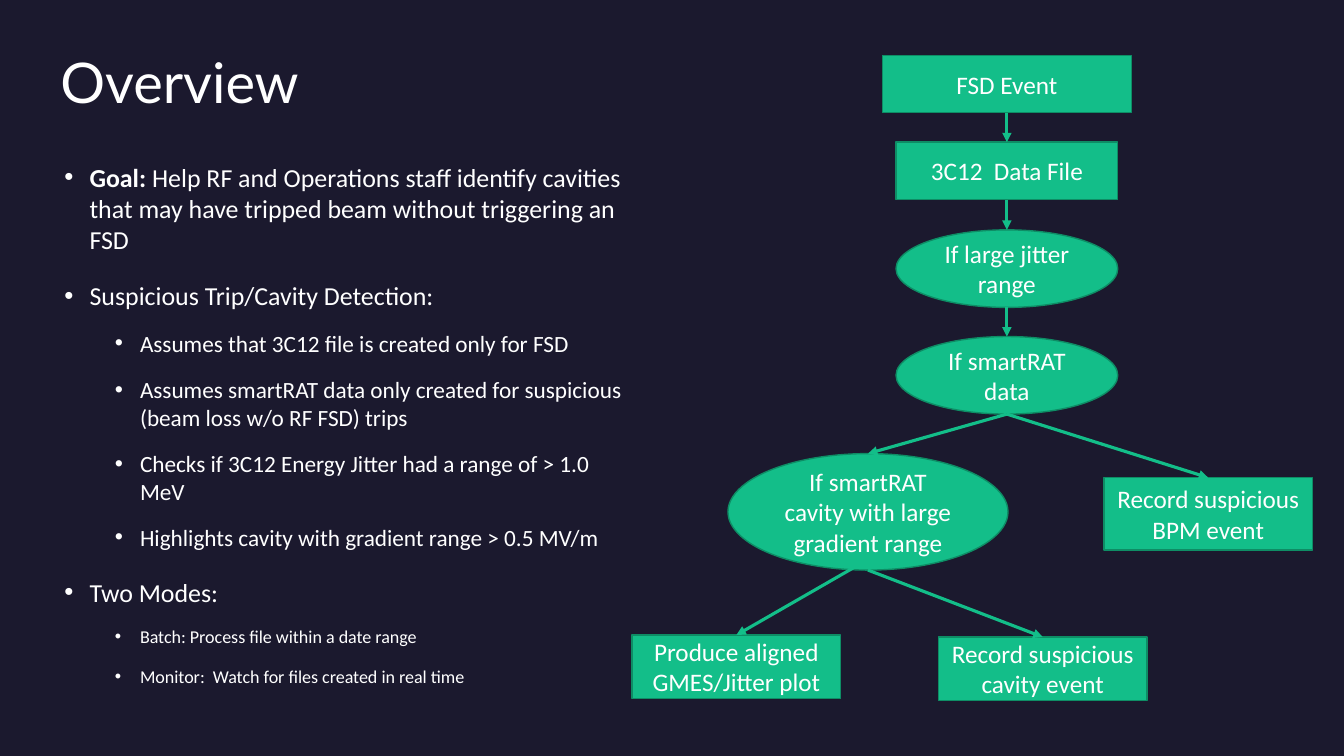
from dataclasses import dataclass

from lxml.etree import SubElement as Sub
from pptx import Presentation
from pptx.dml.color import RGBColor as Rgb
from pptx.enum.shapes import MSO_CONNECTOR as Link, MSO_SHAPE as Form
from pptx.enum.text import MSO_ANCHOR as Anchor, PP_ALIGN as Align
from pptx.oxml.ns import qn
from pptx.util import Inches, Pt


@dataclass(frozen=True)
class Theme:
    back: Rgb = Rgb.from_string("1B192E")
    ink: Rgb = Rgb.from_string("FFFFFF")
    green: Rgb = Rgb.from_string("13BE89")
    edge: Rgb = Rgb.from_string("0E8D65")
    head: str = "Lato"
    body: str = "Calibri"
    title: float = 40
    main: float = 18.5
    sub: float = 16.6
    small: float = 12.9
    node: float = 18


THEME = Theme()
WIDE, HIGH = Inches(13.33), Inches(7.5)
COLS, ROWS = 48, 27
SPINE = 35.96

POINTS = [
    (0, THEME.main, "Goal:", " Help RF and Operations staff identify cavities "
     "that may have tripped beam without triggering an FSD"),
    (0, THEME.main, "", "Suspicious Trip/Cavity Detection:"),
    (1, THEME.sub, "", "Assumes that 3C12 file is created only for FSD"),
    (1, THEME.sub, "", "Assumes smartRAT data only created for suspicious "
     "(beam loss w/o RF FSD) trips"),
    (1, THEME.sub, "", "Checks if 3C12 Energy Jitter had a range of > 1.0 MeV"),
    (1, THEME.sub, "", "Highlights cavity with gradient range > 0.5 MV/m"),
    (0, THEME.main, "", "Two Modes:"),
    (1, THEME.small, "", "Batch: Process file within a date range"),
    (1, THEME.small, "", "Monitor:  Watch for files created in real time"),
]

RECT, OVAL = Form.RECTANGLE, Form.OVAL
NODES = {
    "fsd": (RECT, SPINE, 1.98, 8.89, 2.05, "FSD Event"),
    "file": (RECT, SPINE, 5.08, 7.92, 2.05, "3C12  Data File"),
    "jitter": (OVAL, SPINE, 8.21, 7.92, 2.77, "If large jitter range"),
    "smart": (OVAL, SPINE, 12.02, 7.92, 2.77, "If smartRAT data"),
    "cavity": (OVAL, 31, 16.2, 10, 4.16,
               "If smartRAT cavity with large gradient range"),
    "beam": (RECT, 43.15, 17.06, 7.45, 2.59, "Record suspicious BPM event"),
    "event": (RECT, 37.24, 22.75, 7.45, 2.27, "Record suspicious cavity event"),
    "plot": (RECT, 26.3, 22.68, 7.45, 2.27, "Produce aligned GMES/Jitter plot"),
}

EDGES = [
    ("fsd", "file", 0),
    ("file", "jitter", 0),
    ("jitter", "smart", 0),
    ("smart", "beam", 0),
    ("smart", "cavity", 0),
    ("cavity", "event", 0),
    ("cavity", "plot", 0.38),
]


def col(n):
    return round(WIDE * n / COLS)


def row(n):
    return round(HIGH * n / ROWS)


def style(para, face, size):
    for run in para.runs:
        run.font.name = face
        run.font.size = Pt(size)
        run.font.color.rgb = THEME.ink


def add_text(slide, left, top, wide, high):
    box = slide.shapes.add_textbox(col(left), row(top), col(wide), row(high))
    frame = box.text_frame
    frame.word_wrap = True
    frame.margin_left = frame.margin_right = 0
    frame.margin_top = frame.margin_bottom = 0
    return frame


def add_title(slide, text):
    frame = add_text(slide, 2.16, 1.98, 31.36, 5.72)
    frame.text = text
    para = frame.paragraphs[0]
    para.line_spacing = 0.9
    style(para, THEME.head, THEME.title)


def add_list(slide, items):
    frame = add_text(slide, 2.3, 5.76, 20.05, 19.76)
    for i, (level, size, lead, text) in enumerate(items):
        para = frame.add_paragraph() if i else frame.paragraphs[0]
        para.text = lead or text
        if lead:
            para.runs[0].font.bold = True
            para.add_run().text = text
        style(para, THEME.body, size)
        para.level = level
        para.space_before = Pt(5 if level else 10)
        para.space_after = Pt(8)
        props = para._p.get_or_add_pPr()
        props.set("marL", str(Inches(0.25 + 0.5 * level)))
        props.set("indent", str(Inches(-0.25)))
        Sub(props, qn("a:buFont"), typeface="Arial")
        Sub(props, qn("a:buChar"), char="•")


def add_node(slide, form, mid, top, wide, high, text):
    node = slide.shapes.add_shape(
        form, col(mid - wide / 2), row(top), col(wide), row(high))
    node.shadow.inherit = False
    node.fill.solid()
    node.fill.fore_color.rgb = THEME.green
    node.line.color.rgb = THEME.edge
    node.line.width = Pt(1)
    frame = node.text_frame
    frame.word_wrap = True
    frame.vertical_anchor = Anchor.MIDDLE
    frame.text = text
    para = frame.paragraphs[0]
    para.alignment = Align.CENTER
    style(para, THEME.body, THEME.node)
    return node


def add_arrow(slide, start, end, lift):
    line = slide.shapes.add_connector(
        Link.STRAIGHT,
        start.left + start.width // 2, start.top + start.height - row(lift),
        end.left + end.width // 2, end.top)
    line.line.color.rgb = THEME.green
    line.line.width = Pt(2.25)
    Sub(line.line._get_or_add_ln(), qn("a:tailEnd"), type="triangle")
    Sub(line._element.spPr, qn("a:effectLst"))


def main():
    deck = Presentation()
    deck.slide_width, deck.slide_height = WIDE, HIGH
    slide = deck.slides.add_slide(deck.slide_layouts[6])
    slide.background.fill.solid()
    slide.background.fill.fore_color.rgb = THEME.back
    add_title(slide, "Overview")
    add_list(slide, POINTS)
    nodes = {key: add_node(slide, *spot) for key, spot in NODES.items()}
    for start, end, lift in EDGES:
        add_arrow(slide, nodes[start], nodes[end], lift)
    deck.save("out.pptx")


if __name__ == "__main__":
    main()
